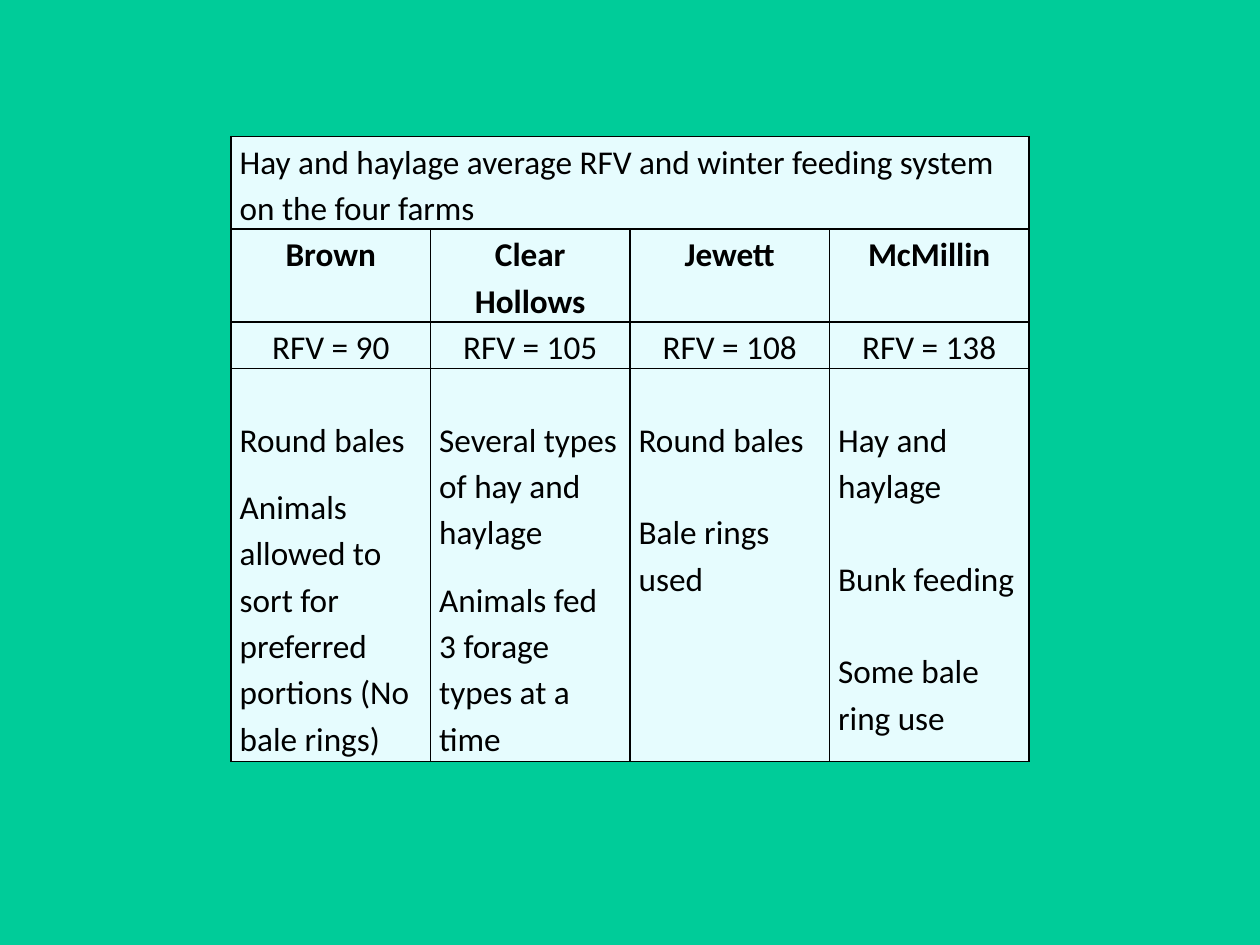
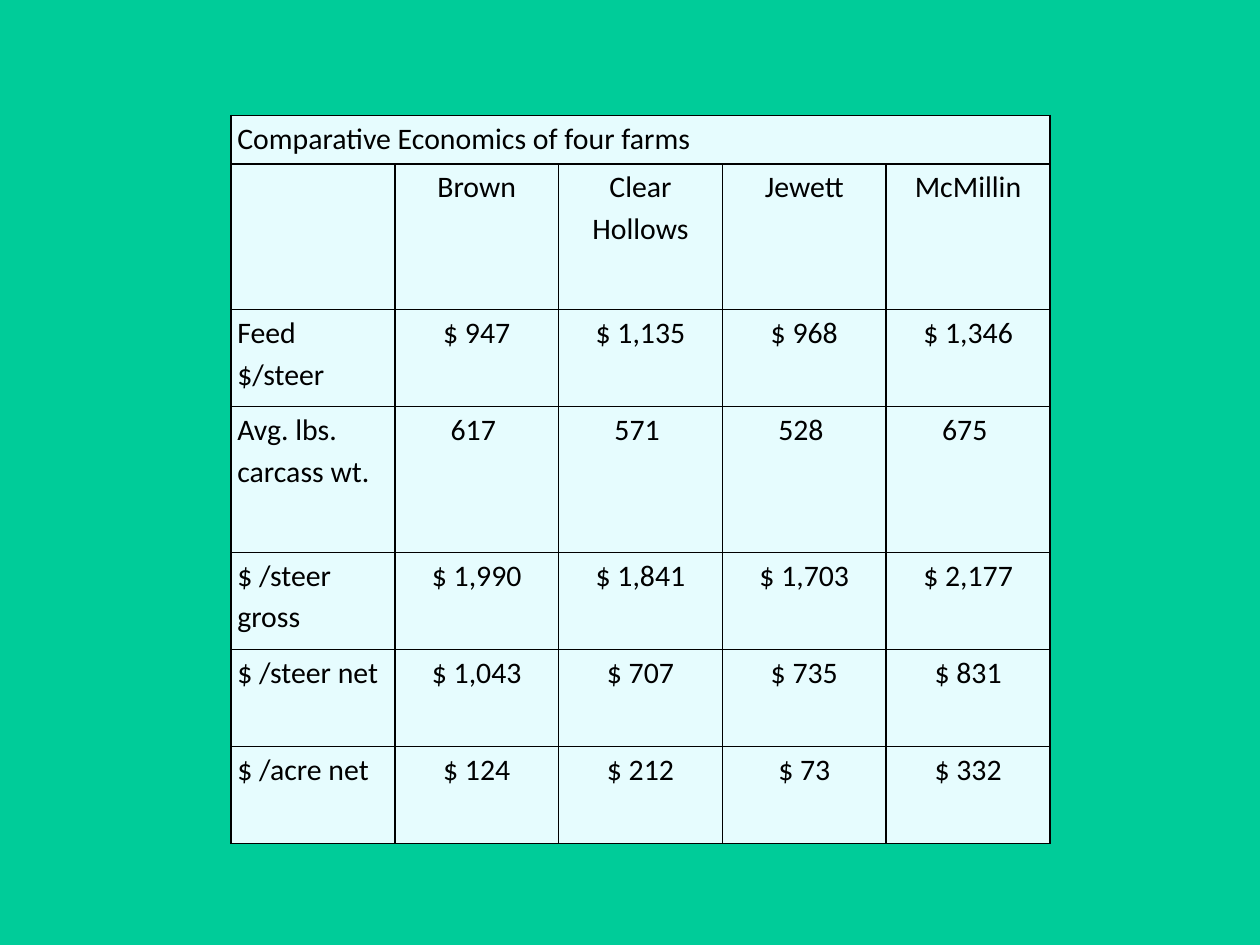
"""Build two slides of tables comparing four farms."""
from lxml import etree
from pptx import Presentation
from pptx.dml.color import RGBColor
from pptx.enum.text import PP_ALIGN
from pptx.oxml.ns import qn
from pptx.util import Pt

LEFT, CENTER = PP_ALIGN.LEFT, PP_ALIGN.CENTER
COLORS = {"background": "00CC99", "cell": "E6FCFE", "ink": "000000"}
FONT = "Calibri"
LINE_SPACING = 1.15
BORDER_WIDTH = 1
TABLE_LEFT = 132
BLANK_LAYOUT = 6
FARMS = ["Brown", "Clear Hollows", "Jewett", "McMillin"]

FEEDING_TITLE = "Hay and haylage average RFV and winter feeding system on the four farms"
AVERAGE_RFV = [90, 105, 108, 138]
FEEDING_LINE = 26.5
FEEDING_SYSTEMS = [
    (12, ["Round bales",
          "Animals allowed to sort for preferred portions (No bale rings)"]),
    (12, ["Several types of hay and haylage",
          "Animals fed 3 forage types at a time"]),
    (FEEDING_LINE, ["Round bales", "Bale rings used"]),
    (FEEDING_LINE, ["Hay and haylage", "Bunk feeding", "Some bale ring use"]),
]

ECONOMICS_TITLE = "Comparative Economics of four farms"
ECONOMICS_LINE = 27.75
ECONOMICS_ROW_LINES = [1, 3, 2, 3, 2, 2, 2]
ECONOMICS = [
    ["", *FARMS],
    ["Feed $/steer", "$ 947", "$ 1,135", "$ 968", "$ 1,346"],
    ["Avg. lbs. carcass wt.", "617 ", "571 ", "528 ", "675 "],
    ["$ /steer gross", "$ 1,990", "$ 1,841", "$ 1,703", "$ 2,177"],
    ["$ /steer net", "$ 1,043", "$ 707", "$ 735", "$ 831"],
    ["$ /acre net", "$ 124", "$ 212", "$ 73", "$ 332"],
]


def color(name):
    return RGBColor.from_string(COLORS[name])


def style_cell(cell, inset):
    cell.margin_left = cell.margin_right = Pt(inset)
    cell.margin_top = cell.margin_bottom = 0
    properties = cell._tc.get_or_add_tcPr()
    for side in ("a:lnL", "a:lnR", "a:lnT", "a:lnB"):
        line = etree.SubElement(properties, qn(side), w=str(Pt(BORDER_WIDTH)))
        fill = etree.SubElement(line, qn("a:solidFill"))
        etree.SubElement(fill, qn("a:srgbClr"), val=COLORS["ink"])
    cell.fill.solid()
    cell.fill.fore_color.rgb = color("cell")


def write(cell, *texts, size, align=LEFT, bold=False, gap=0):
    frame = cell.text_frame
    for index, text in enumerate(texts):
        para = frame.add_paragraph() if index else frame.paragraphs[0]
        para.alignment = align
        para.line_spacing = LINE_SPACING
        para.space_before = Pt(gap if index else 0)
        para.font.size = Pt(size)
        if text:
            span = para.add_run()
            span.text = text
            span.font.name = FONT
            span.font.size = Pt(size)
            span.font.bold = bold
            span.font.color.rgb = color("ink")


def add_titled_table(deck, title, *, top, column_width, columns, heights, inset, size):
    page = deck.slides.add_slide(deck.slide_layouts[BLANK_LAYOUT])
    table = page.shapes.add_table(
        len(heights), columns, Pt(TABLE_LEFT), Pt(top),
        Pt(column_width * columns), Pt(sum(heights))).table
    table.first_row = table.horz_banding = False
    for column in table.columns:
        column.width = Pt(column_width)
    for row, height in zip(table.rows, heights):
        row.height = Pt(height)
        for cell in row.cells:
            style_cell(cell, inset)
    table.cell(0, 0).merge(table.cell(0, columns - 1))
    write(table.cell(0, 0), title, size=size)
    return table


def add_feeding_page(deck):
    size = 19
    table = add_titled_table(
        deck, FEEDING_TITLE, top=78, column_width=114, columns=len(FARMS),
        heights=[2 * FEEDING_LINE, 2 * FEEDING_LINE, FEEDING_LINE, 224.6],
        inset=5, size=size)
    for column, (farm, rfv, system) in enumerate(zip(FARMS, AVERAGE_RFV, FEEDING_SYSTEMS)):
        gap, notes = system
        write(table.cell(1, column), farm, size=size, align=CENTER, bold=True)
        write(table.cell(2, column), f"RFV = {rfv}", size=size, align=CENTER)
        notes_cell = table.cell(3, column)
        notes_cell.margin_top = Pt(FEEDING_LINE)
        write(notes_cell, *notes, size=size, gap=gap)


def add_economics_page(deck):
    size = 17
    table = add_titled_table(
        deck, ECONOMICS_TITLE, top=66, column_width=93.6, columns=len(ECONOMICS[0]),
        heights=[lines * ECONOMICS_LINE for lines in ECONOMICS_ROW_LINES],
        inset=3.6, size=size)
    for row, values in enumerate(ECONOMICS, start=1):
        for column, value in enumerate(values):
            write(table.cell(row, column), value, size=size,
                  align=CENTER if column else LEFT)


def main():
    deck = Presentation()
    deck.slide_width, deck.slide_height = Pt(720), Pt(540)
    background = deck.slide_master.background.fill
    background.solid()
    background.fore_color.rgb = color("background")
    add_feeding_page(deck)
    add_economics_page(deck)
    deck.save("out.pptx")


if __name__ == "__main__":
    main()
